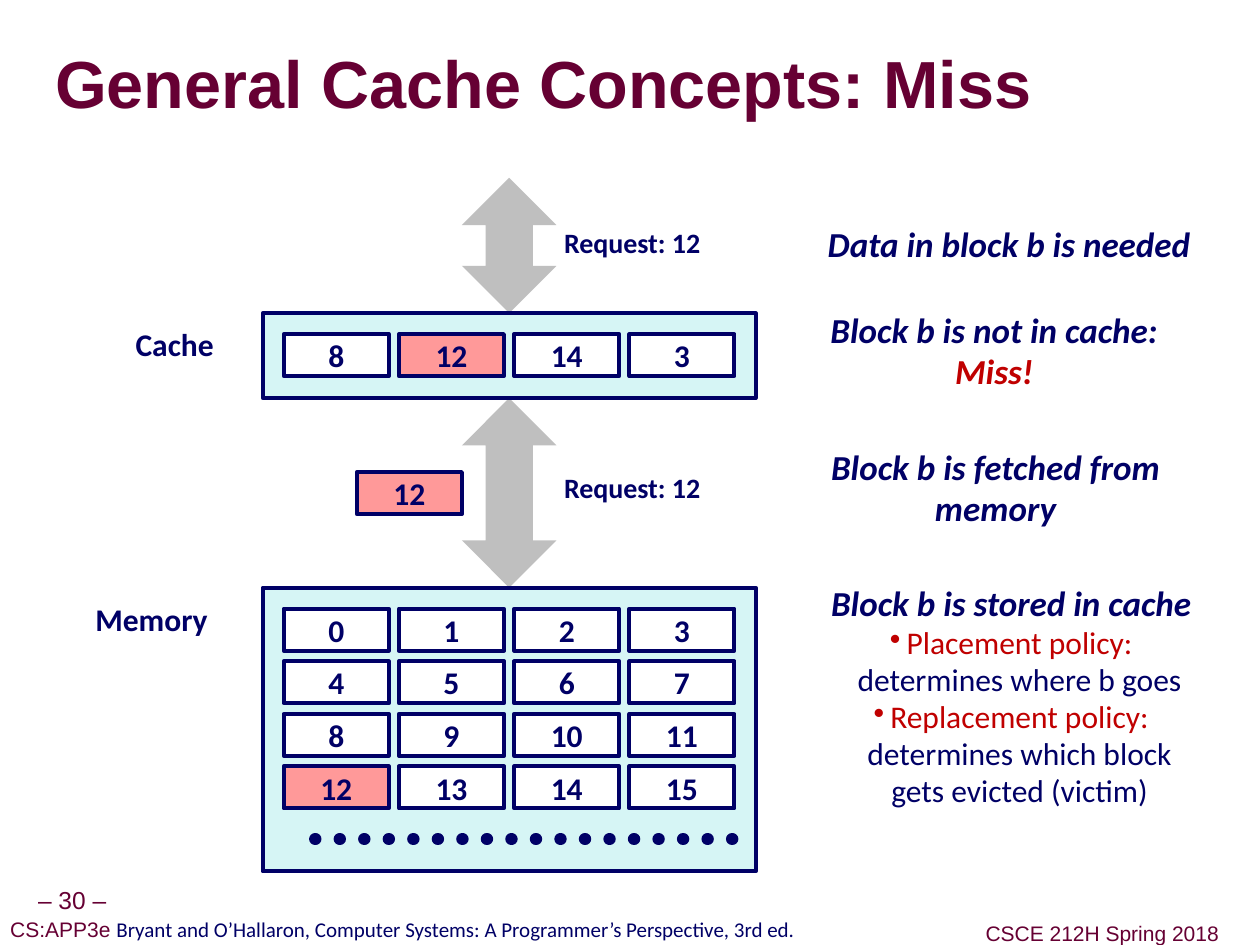
"""Build the slide that explains a cache miss."""
from dataclasses import dataclass

from lxml import etree
from pptx import Presentation
from pptx.dml.color import RGBColor
from pptx.enum import dml, shapes, text
from pptx.oxml.ns import qn
from pptx.util import Pt


@dataclass(frozen=True)
class Theme:
    navy: str = "000066"
    maroon: str = "660033"
    red: str = "C00000"
    panel: str = "D6F5F5"
    block: str = "FFFFFF"
    wanted: str = "FF9999"
    arrow: str = "BFBFBF"
    shadow: str = "969696"
    body_font: str = "Calibri"
    title_font: str = "Arial"
    title_size: float = 38
    note_size: float = 20
    label_size: float = 18
    request_size: float = 16
    page_size: float = 14
    footer_size: float = 12
    outline: float = 2.25
    dots: float = 7


THEME = Theme()

TITLE = "General Cache Concepts: Miss"
WANTED = 12
CACHE = [[8, 12, 14, 3]]
MEMORY = [[0, 1, 2, 3], [4, 5, 6, 7], [8, 9, 10, 11], [12, 13, 14, 15]]

LABELS = [
    ("Cache", (70, 184.5, 59.5, 26.5), THEME.label_size),
    ("Memory", (47, 341.5, 79, 26.5), THEME.label_size),
    ("Request: 12", (314.5, 127.5, 93, 24.5), THEME.request_size),
    ("Request: 12", (314.5, 267, 93, 24.5), THEME.request_size),
]

HEADING, BULLET = "heading", "bullet"
NOTES = [
    ((465, 124.5, 222.5, 31), [(HEADING, [("Data in block b is needed", THEME.navy)])]),
    ((466.5, 173.5, 202.5, 54.5), [(HEADING, [("Block b is not in cache:", THEME.navy)]),
                                   (HEADING, [("Miss!", THEME.red)])]),
    ((467, 251.5, 203, 54.5), [(HEADING, [("Block b is fetched from", THEME.navy)]),
                               (HEADING, [("memory", THEME.navy)])]),
    ((467, 329, 221, 137.5), [
        (HEADING, [("Block b is stored in cache", THEME.navy)]),
        (BULLET, [("Placement policy:\v", THEME.red),
                  ("determines where b goes", THEME.navy)]),
        (BULLET, [("Replacement policy:\v", THEME.red),
                  ("determines which block\vgets evicted (victim)", THEME.navy)]),
    ]),
]

FOOTERS = [
    ((17.5, 503.5, 47.5, 22), THEME.page_size, [("– 30 –", THEME.title_font, THEME.maroon)]),
    ((0, 521.5, 460, 20), THEME.footer_size, [
        ("CS:APP3e ", THEME.title_font, THEME.maroon),
        ("Bryant and O’Hallaron, Computer Systems: A Programmer’s Perspective, 3rd ed.",
         THEME.body_font, THEME.navy)]),
    ((559, 523.5, 141, 20), THEME.footer_size,
     [("CSCE 212H Spring 2018", THEME.title_font, THEME.maroon)]),
]

PANEL_LEFT, PANEL_WIDTH = 150, 281.5
CACHE_TOP, CACHE_HEIGHT = 178.75, 48.5
MEMORY_TOP, MEMORY_HEIGHT = 335.5, 162
BLOCK_WIDTH, BLOCK_HEIGHT = 60, 24
COLUMN_PITCH, ROW_PITCH, BLOCK_INSET = 65.8, 30, 12
ARROW_WIDTH, REQUEST_TOP = 54, 101.5
ARROW_LEFT = PANEL_LEFT + (PANEL_WIDTH - ARROW_WIDTH) / 2
CACHE_BOTTOM = CACHE_TOP + CACHE_HEIGHT


def points(*lengths):
    return [Pt(length) for length in lengths]


def style(font, size=None, color=None, name=None, bold=None, italic=None):
    if size:
        font.size = Pt(size)
    if color:
        font.color.rgb = RGBColor.from_string(color)
    if name:
        font.name = name
    font.bold, font.italic = bold, italic


def add_runs(paragraph, content):
    for index, piece in enumerate(content.split("\v")):
        if index:
            paragraph.add_line_break()
        if piece:
            run = paragraph.add_run()
            run.text = piece
            yield run


def add_box(slide, kind, place, fill, outlined=True):
    shape = slide.shapes.add_shape(kind, *points(*place))
    shape.shadow.inherit = False
    shape.fill.solid()
    shape.fill.fore_color.rgb = RGBColor.from_string(fill)
    if outlined:
        shape.line.color.rgb = RGBColor.from_string(THEME.navy)
        shape.line.width = Pt(THEME.outline)
    else:
        shape.line.fill.background()
    return shape


def add_block(slide, left, top, number):
    fill = THEME.wanted if number == WANTED else THEME.block
    shape = add_box(slide, shapes.MSO_SHAPE.RECTANGLE,
                    (left, top, BLOCK_WIDTH, BLOCK_HEIGHT), fill)
    shape.text_frame.vertical_anchor = text.MSO_ANCHOR.MIDDLE
    paragraph = shape.text_frame.paragraphs[0]
    paragraph.text = str(number)
    paragraph.alignment = text.PP_ALIGN.CENTER
    style(paragraph.font, THEME.label_size, THEME.navy, THEME.body_font, True)


def add_panel(slide, top, height, rows):
    add_box(slide, shapes.MSO_SHAPE.RECTANGLE, (PANEL_LEFT, top, PANEL_WIDTH, height), THEME.panel)
    for row, numbers in enumerate(rows):
        for column, number in enumerate(numbers):
            add_block(slide, PANEL_LEFT + BLOCK_INSET + column * COLUMN_PITCH,
                      top + BLOCK_INSET + row * ROW_PITCH, number)


def add_text_frame(slide, place, anchor=text.MSO_ANCHOR.MIDDLE):
    frame = slide.shapes.add_textbox(*points(*place)).text_frame
    frame.word_wrap = False
    frame.vertical_anchor = anchor
    return frame


def center(paragraph, spacing):
    paragraph.alignment = text.PP_ALIGN.CENTER
    paragraph.line_spacing = spacing


def add_bullet(paragraph):
    properties = paragraph._p.get_or_add_pPr()
    properties.set("marL", str(Pt(9.5)))
    properties.set("indent", str(Pt(-9.5)))
    etree.SubElement(properties, qn("a:buChar"), char="•")


def add_note(slide, place, lines):
    frame = add_text_frame(slide, place)
    for index, (kind, pieces) in enumerate(lines):
        paragraph = frame.add_paragraph() if index else frame.paragraphs[0]
        heading = kind == HEADING
        if not heading:
            add_bullet(paragraph)
        center(paragraph, 0.98)
        style(paragraph.font, THEME.note_size if heading else THEME.label_size,
              name=THEME.body_font, bold=heading, italic=heading)
        for content, color in pieces:
            for run in add_runs(paragraph, content):
                style(run.font, color=color)


def add_label(slide, content, place, size):
    paragraph = add_text_frame(slide, place, text.MSO_ANCHOR.TOP).paragraphs[0]
    paragraph.text = content
    center(paragraph, 0.9)
    style(paragraph.font, size, THEME.navy, THEME.body_font, True)


def add_footer(slide, place, size, pieces):
    frame = add_text_frame(slide, place)
    frame.margin_left = frame.margin_right = Pt(3.6)
    paragraph = frame.paragraphs[0]
    center(paragraph, 0.9)
    style(paragraph.font, size)
    for content, name, color in pieces:
        for run in add_runs(paragraph, content):
            style(run.font, color=color, name=name)


def set_title(title):
    title.left, title.top, title.width, title.height = points(31.5, 19.5, 685.5, 61)
    frame = title.text_frame
    frame.margin_left = frame.margin_right = frame.margin_top = frame.margin_bottom = 0
    frame.vertical_anchor = text.MSO_ANCHOR.MIDDLE
    frame.auto_size = text.MSO_AUTO_SIZE.NONE
    paragraph = frame.paragraphs[0]
    paragraph.text = TITLE
    paragraph.alignment = text.PP_ALIGN.LEFT
    paragraph.line_spacing = 0.87
    style(paragraph.font, THEME.title_size, THEME.maroon, THEME.title_font, True)
    effects = etree.SubElement(paragraph.runs[0]._r.get_or_add_rPr(), qn("a:effectLst"))
    shadow = etree.SubElement(effects, qn("a:outerShdw"), dist=str(Pt(4)), dir="2700000")
    etree.SubElement(shadow, qn("a:srgbClr"), val=THEME.shadow)


def add_dots(slide):
    dots = slide.shapes.add_connector(shapes.MSO_CONNECTOR.STRAIGHT, *points(180, 479, 419, 479))
    dots.line.color.rgb = RGBColor.from_string(THEME.navy)
    dots.line.width = Pt(THEME.dots)
    dots.line.dash_style = dml.MSO_LINE.ROUND_DOT
    properties = dots._element.spPr
    properties.find(qn("a:ln")).set("cap", "rnd")
    etree.SubElement(properties, qn("a:effectLst"))


def main():
    presentation = Presentation()
    presentation.slide_width, presentation.slide_height = points(719.5, 539.5)
    slide = presentation.slides.add_slide(presentation.slide_layouts[5])
    set_title(slide.shapes.title)
    for footer in FOOTERS:
        add_footer(slide, *footer)
    for top, bottom in [(REQUEST_TOP, CACHE_TOP), (CACHE_BOTTOM, MEMORY_TOP)]:
        add_box(slide, shapes.MSO_SHAPE.UP_DOWN_ARROW,
                (ARROW_LEFT, top, ARROW_WIDTH, bottom - top), THEME.arrow, outlined=False)
    add_panel(slide, MEMORY_TOP, MEMORY_HEIGHT, MEMORY)
    add_panel(slide, CACHE_TOP, CACHE_HEIGHT, CACHE)
    add_block(slide, ARROW_LEFT - BLOCK_WIDTH, 269.5, WANTED)
    add_dots(slide)
    for label in LABELS:
        add_label(slide, *label)
    for note in NOTES:
        add_note(slide, *note)
    presentation.save("out.pptx")


if __name__ == "__main__":
    main()
